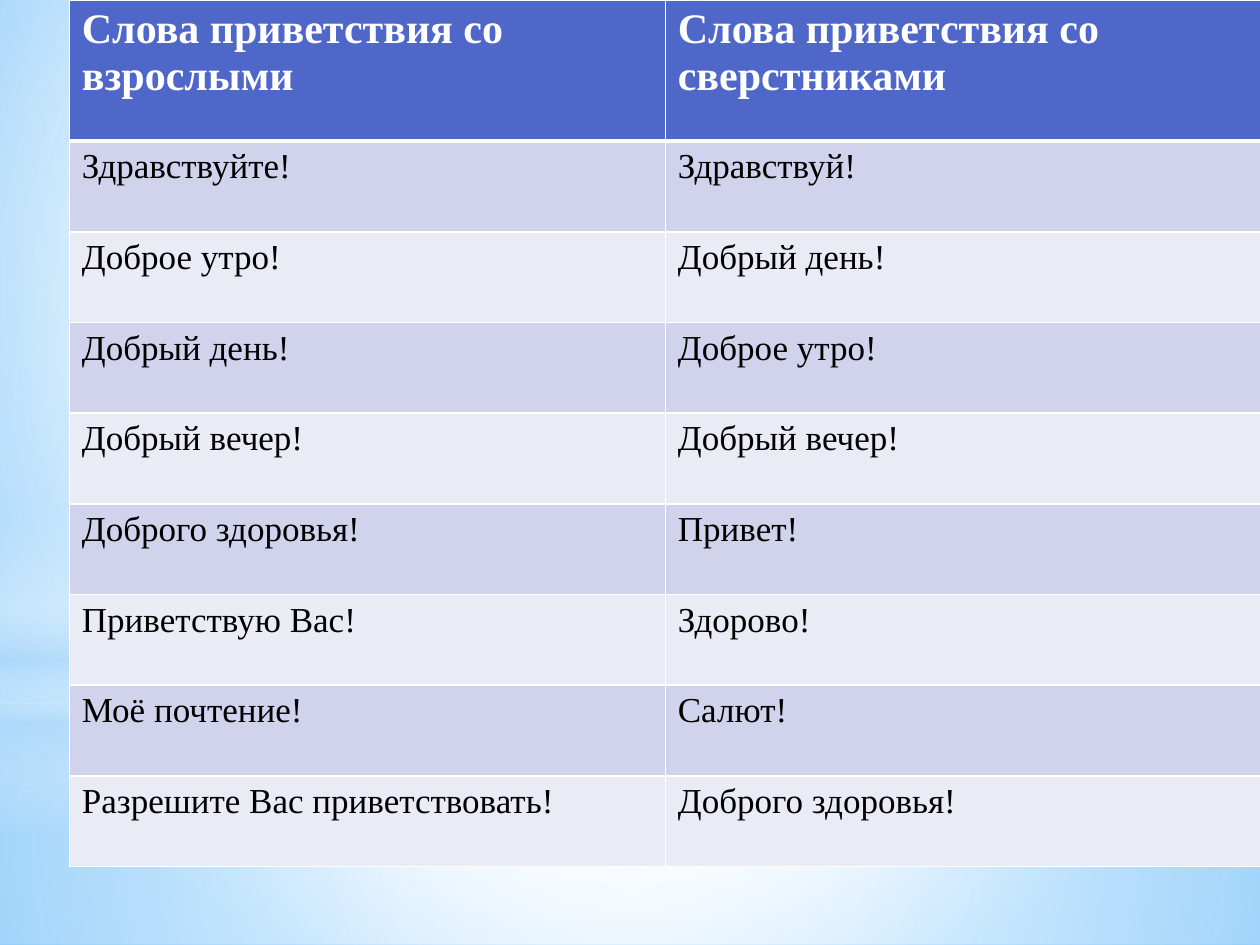
"""Build a slide with a table of greeting words on a sky-blue backdrop."""
from dataclasses import dataclass

import pptx
import pptx.dml.color
import pptx.enum.shapes
import pptx.oxml
import pptx.oxml.ns
import pptx.util
from pptx.util import Inches


@dataclass(frozen=True)
class Theme:
    """Colours, font and type sizes of the slide."""
    font: str = "Times New Roman"
    header_size: int = 24
    body_size: int = 20
    white: str = "FFFFFF"
    black: str = "000000"
    header: str = "4E67C8"
    bands: tuple = ("D0D3EB", "E9EBF5")
    sky: str = "B4DCFA"
    sky_edge: str = "5BB9FF"
    sky_center: str = "9ED5FF"


THEME = Theme()
CENTER = (50, 50, 50, 50)
GREETINGS = [
    ("Слова приветствия со взрослыми", "Слова приветствия со сверстниками"),
    ("Здравствуйте!", "Здравствуй!"),
    ("Доброе утро!", "Добрый день!"),
    ("Добрый день!", "Доброе утро!"),
    ("Добрый вечер!", "Добрый вечер!"),
    ("Доброго здоровья!", "Привет!"),
    ("Приветствую Вас!", "Здорово!"),
    ("Моё почтение!", "Салют!"),
    ("Разрешите Вас приветствовать!", "Доброго здоровья!"),
]


def rgb(color):
    """Return a hex string as an RGB colour."""
    return pptx.dml.color.RGBColor.from_string(color)


def set_gradient(fill, owner, stops, focus=None):
    """Fill with (position, colour, opacity) stops, circular if a focus is given."""
    fill.gradient()
    stop_xml = "".join(
        f'<a:gs pos="{position * 1000}"><a:srgbClr val="{color}">'
        f'<a:alpha val="{opacity * 1000}"/></a:srgbClr></a:gs>'
        for position, color, opacity in stops)
    if focus:
        sides = " ".join(f'{side}="{value * 1000}"' for side, value in zip("ltrb", focus))
        direction = f'<a:path path="circle"><a:fillToRect {sides}/></a:path>'
    else:
        direction = '<a:lin ang="5400000" scaled="0"/>'
    gradient = pptx.oxml.parse_xml(
        f'<a:gradFill {pptx.oxml.ns.nsdecls("a")} rotWithShape="1">'
        f'<a:gsLst>{stop_xml}</a:gsLst>{direction}</a:gradFill>')
    current = owner.find(".//" + pptx.oxml.ns.qn("a:gradFill"))
    current.getparent().replace(current, gradient)


def add_glow(page, kind, top, height, stops, focus=None):
    """Add a full-width translucent gradient shape."""
    glow = page.shapes.add_shape(kind, 0, Inches(top), Inches(10), Inches(height))
    glow.shadow.inherit = False
    glow.line.fill.background()
    set_gradient(glow.fill, glow.element, stops, focus)


def add_backdrop(page):
    """Paint the background and the glows over it."""
    kinds = pptx.enum.shapes.MSO_SHAPE
    white, sky = THEME.white, THEME.sky
    set_gradient(page.background.fill, page.element,
                 [(0, THEME.sky_center, 100), (60, white, 100), (100, THEME.sky_edge, 100)],
                 (20, 10, 20, 60))
    add_glow(page, kinds.RECTANGLE, 5.58, 1.92,
             [(0, white, 91), (37, white, 76), (100, sky, 79)], CENTER)
    add_glow(page, kinds.RECTANGLE, 0, 5.58,
             [(0, white, 89), (48, white, 62), (100, sky, 79)], CENTER)
    add_glow(page, kinds.RECTANGLE, 4.12, 2.5,
             [(0, white, 0), (29, white, 30), (45, sky, 40),
              (55, white, 26), (65, sky, 60), (100, white, 0)])
    add_glow(page, kinds.OVAL, 1.75, 5.58, [(0, white, 100), (56, white, 0)], CENTER)


def set_borders(cell, top, bottom):
    """Draw white cell borders with the given top and bottom widths in points."""
    properties = cell._tc.get_or_add_tcPr()
    for side, points in (("L", 1), ("R", 1), ("T", top), ("B", bottom)):
        properties.append(pptx.oxml.parse_xml(
            f'<a:ln{side} {pptx.oxml.ns.nsdecls("a")} w="{pptx.util.Pt(points)}">'
            f'<a:solidFill><a:srgbClr val="{THEME.white}"/></a:solidFill></a:ln{side}>'))


def fill_cell(cell, text, row):
    """Write and style one table cell according to its row."""
    is_header = row == 0
    set_borders(cell, 3 if row == 1 else 1, 3 if is_header else 1)
    cell.fill.solid()
    cell.fill.fore_color.rgb = rgb(THEME.header if is_header else THEME.bands[(row - 1) % 2])
    cell.text = text
    font = cell.text_frame.paragraphs[0].font
    font.name = THEME.font
    font.size = pptx.util.Pt(THEME.header_size if is_header else THEME.body_size)
    font.bold = is_header
    font.color.rgb = rgb(THEME.white if is_header else THEME.black)


def add_greetings(page):
    """Add the two-column table of greetings."""
    table = page.shapes.add_table(len(GREETINGS), 2, Inches(0.55), 0,
                                  Inches(9.46), Inches(6.88)).table
    for column in table.columns:
        column.width = Inches(4.73)
    for row, texts in enumerate(GREETINGS):
        table.rows[row].height = Inches(0.72 if row else 1.12)
        for column, text in enumerate(texts):
            fill_cell(table.cell(row, column), text, row)


def main():
    """Build and save the deck."""
    deck = pptx.Presentation()
    deck.slide_width, deck.slide_height = Inches(10), Inches(7.5)
    page = deck.slides.add_slide(deck.slide_layouts[6])
    add_backdrop(page)
    add_greetings(page)
    deck.save("out.pptx")


if __name__ == "__main__":
    main()
